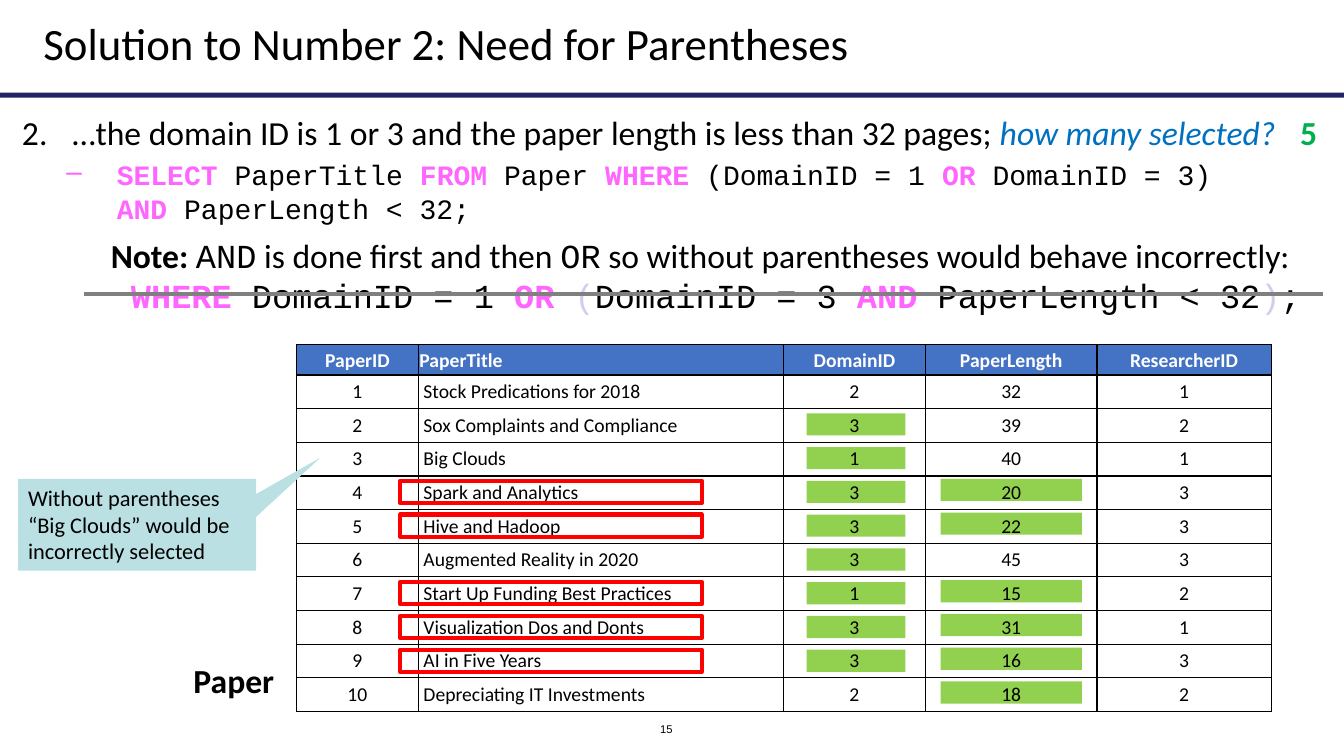
from lxml import etree
from pptx import Presentation, util as u
from pptx.dml.color import RGBColor
from pptx.enum import shapes, text
from pptx.oxml import ns

BLACK, PINK, GREEN, PALE = "000000", "FF66FF", "92D050", "CECEEF"
BODY, CODE = "Calibri", "Courier New"
LEFT, CENTER = text.PP_ALIGN.LEFT, text.PP_ALIGN.CENTER
rgb = RGBColor.from_string


def write(p, size, *runs):
    """Add (text, font, colour, bold, italic) runs; the last three are optional."""
    for words, name, *style in runs:
        color, bold, italic = style + [BLACK, False, False][len(style):]
        r = p.add_run()
        r.text = words
        r.font.name, r.font.size = name, u.Pt(size)
        r.font.bold, r.font.italic = bold, italic
        r.font.color.rgb = rgb(color)


def block(x, y, w, h, fill=None, line=None, kind=shapes.MSO_SHAPE.RECTANGLE):
    """Add a flat shape, in inches, with an optional fill and outline."""
    sp = s.shapes.add_shape(kind, *map(u.Inches, (x, y, w, h)))
    sp.shadow.inherit = False
    for part, color in ((sp.fill, fill), (sp.line.fill, line)):
        if color:
            part.solid()
            part.fore_color.rgb = rgb(color)
        else:
            part.background()
    if line:
        sp.line.width = u.Pt(3)
    return sp


prs = Presentation()
prs.slide_width, prs.slide_height = u.Inches(13.33), u.Inches(7.5)
s = prs.slides.add_slide(prs.slide_layouts[5])

# Title and rule
title = s.shapes.title
title.left, title.top, title.width, title.height = map(u.Inches, (0.33, 0.08, 10.75, 0.68))
title.text_frame.vertical_anchor = text.MSO_ANCHOR.MIDDLE
p = title.text_frame.paragraphs[0]
p.alignment = LEFT
write(p, 32, ("Solution to Number 2: Need for Parentheses", BODY))
block(0, 0.92, 13.33, 0.05, "222267")

# Question and its query
tf = s.shapes.add_textbox(*map(u.Inches, (0.12, 1.06, 13, 1.3))).text_frame
tf.word_wrap = True
question, query = tf.paragraphs[0], tf.add_paragraph()
for p, margin, tag, attrs in (
    (question, 0.5, "a:buAutoNum", {"type": "arabicPeriod", "startAt": "2"}),
    (query, 0.94, "a:buChar", {"char": "–"}),
):
    pPr = p._p.get_or_add_pPr()
    pPr.set("marL", str(u.Inches(margin)))
    pPr.set("indent", str(u.Inches(-0.5)))
    etree.SubElement(pPr, ns.qn(tag), attrs)
query.space_before = u.Pt(4)
write(question, 24,
      ("…the domain ID is 1 or 3 and the paper length is less than 32 pages; ", BODY),
      ("how many selected?", BODY, "0070C0", False, True))
write(query, 20,
      ("SELECT ", CODE, PINK, True), ("PaperTitle ", CODE),
      ("FROM", CODE, PINK, True), (" Paper ", CODE),
      ("WHERE", CODE, PINK, True), (" (DomainID = 1 ", CODE),
      ("OR ", CODE, PINK, True), ("DomainID = 3)", CODE))
query.add_line_break()
write(query, 20, ("AND ", CODE, PINK, True), ("PaperLength < 32;", CODE))

# Short labels: answer, table name, slide number
for words, x, y, w, h, size, name, color, bold, align in (
    ("5", 12.71, 1.06, 0.54, 0.5, 24, BODY, "00B050", True, CENTER),
    ("Paper", 1.82, 6.5, 1.01, 0.5, 24, BODY, BLACK, True, LEFT),
    ("15", 6, 7.11, 1.22, 0.24, 8, "Arial", BLACK, False, CENTER),
):
    tf = s.shapes.add_textbox(*map(u.Inches, (x, y, w, h))).text_frame
    tf.vertical_anchor = text.MSO_ANCHOR.MIDDLE
    tf.word_wrap = words != "Paper"
    tf.paragraphs[0].alignment = align
    write(tf.paragraphs[0], size, (words, name, color, bold))

# Paper table, with the cells that meet each condition marked behind it
header = ("PaperID", "PaperTitle", "DomainID", "PaperLength", "ResearcherID")
papers = (
    (1, "Stock Predications for 2018", 2, 32, 1),
    (2, "Sox Complaints and Compliance", 3, 39, 2),
    (3, "Big Clouds", 1, 40, 1),
    (4, "Spark and Analytics", 3, 20, 3),
    (5, "Hive and Hadoop", 3, 22, 3),
    (6, "Augmented Reality in 2020", 3, 45, 3),
    (7, "Start Up Funding Best Practices", 1, 15, 2),
    (8, "Visualization Dos and Donts", 3, 31, 1),
    (9, "AI in Five Years", 3, 16, 3),
    (10, "Depreciating IT Investments", 2, 18, 2),
)
ROW = 3.35 / 10
mark_y = {paper[0]: 3.43 + ROW * paper[0] for paper in papers}
for number, _, domain, length, _ in papers:
    if domain in (1, 3):
        block(8, mark_y[number], 0.98, 0.22, GREEN)
    if length < 32:
        block(9.33, mark_y[number] - 0.02, 1.4, 0.22, GREEN)

table = s.shapes.add_table(len(papers) + 1, len(header),
                           *map(u.Inches, (2.94, 3.42, 9.67, 3.63))).table
table.first_row = table.horz_banding = False
for column, width in zip(table.columns, (1.21, 3.62, 1.41, 1.7, 1.73)):
    column.width = u.Inches(width)
for i, values in enumerate((header, *papers)):
    head = i == 0
    table.rows[i].height = u.Inches(0.3 if head else 0.33)
    for j, value in enumerate(values):
        cell = table.cell(i, j)
        inset = u.Inches(0.01 if head else 0.05)
        cell.margin_left = cell.margin_right = cell.margin_top = inset
        cell.margin_bottom = 0 if head else inset
        cell.vertical_anchor = text.MSO_ANCHOR.MIDDLE if head else text.MSO_ANCHOR.BOTTOM
        p = cell.text_frame.paragraphs[0]
        p.alignment = LEFT if j == 1 else CENTER
        write(p, 14, (str(value), BODY, "FFFFFF" if head else BLACK, head))
        tcPr = cell._tc.get_or_add_tcPr()
        for side in ("a:lnL", "a:lnR", "a:lnT", "a:lnB"):
            ln = etree.SubElement(tcPr, ns.qn(side), w=str(u.Pt(1)))
            fill = etree.SubElement(ln, ns.qn("a:solidFill"))
            etree.SubElement(fill, ns.qn("a:srgbClr"), val=BLACK)
        if head:
            cell.fill.solid()
            cell.fill.fore_color.rgb = rgb("4472C4")
        else:
            cell.fill.background()

for number, _, domain, length, _ in papers:
    if domain in (1, 3) and length < 32:
        block(3.97, mark_y[number], 2.99, 0.22, line="FF0000")

# Note on operator order, with the wrong condition struck out
tf = s.shapes.add_textbox(*map(u.Inches, (1, 2.28, 12.12, 0.91))).text_frame
tf.word_wrap = True
write(tf.paragraphs[0], 24,
      ("Note: ", BODY, BLACK, True), ("AND", CODE),
      (" is done first and then ", BODY), ("OR", CODE),
      (" so without parentheses would behave incorrectly:", BODY))
write(tf.add_paragraph(), 24,
      (" WHERE ", CODE, PINK, True), ("DomainID = 1 ", CODE),
      ("OR ", CODE, PINK, True), ("(", CODE, PALE), ("DomainID = 3 ", CODE),
      ("AND ", CODE, PINK, True), ("PaperLength < 32", CODE),
      (")", CODE, PALE), (";", CODE))

callout = block(0.18, 4.75, 2.36, 0.91, "BBE0E3",
                kind=shapes.MSO_SHAPE.RECTANGULAR_CALLOUT)
callout.adjustments[0], callout.adjustments[1] = 0.77, -0.73
tf = callout.text_frame
tf.word_wrap = True
tf.vertical_anchor = text.MSO_ANCHOR.TOP
tf.paragraphs[0].alignment = LEFT
write(tf.paragraphs[0], 16,
      ("Without parentheses “Big Clouds” would be incorrectly selected", BODY))

strike = s.shapes.add_connector(shapes.MSO_CONNECTOR.STRAIGHT,
                                *map(u.Inches, (0.83, 2.92, 13.12, 2.92)))
strike.line.color.rgb = rgb("808080")
strike.line.width = u.Pt(3)
etree.SubElement(strike._element.spPr, ns.qn("a:effectLst"))

prs.save("out.pptx")
